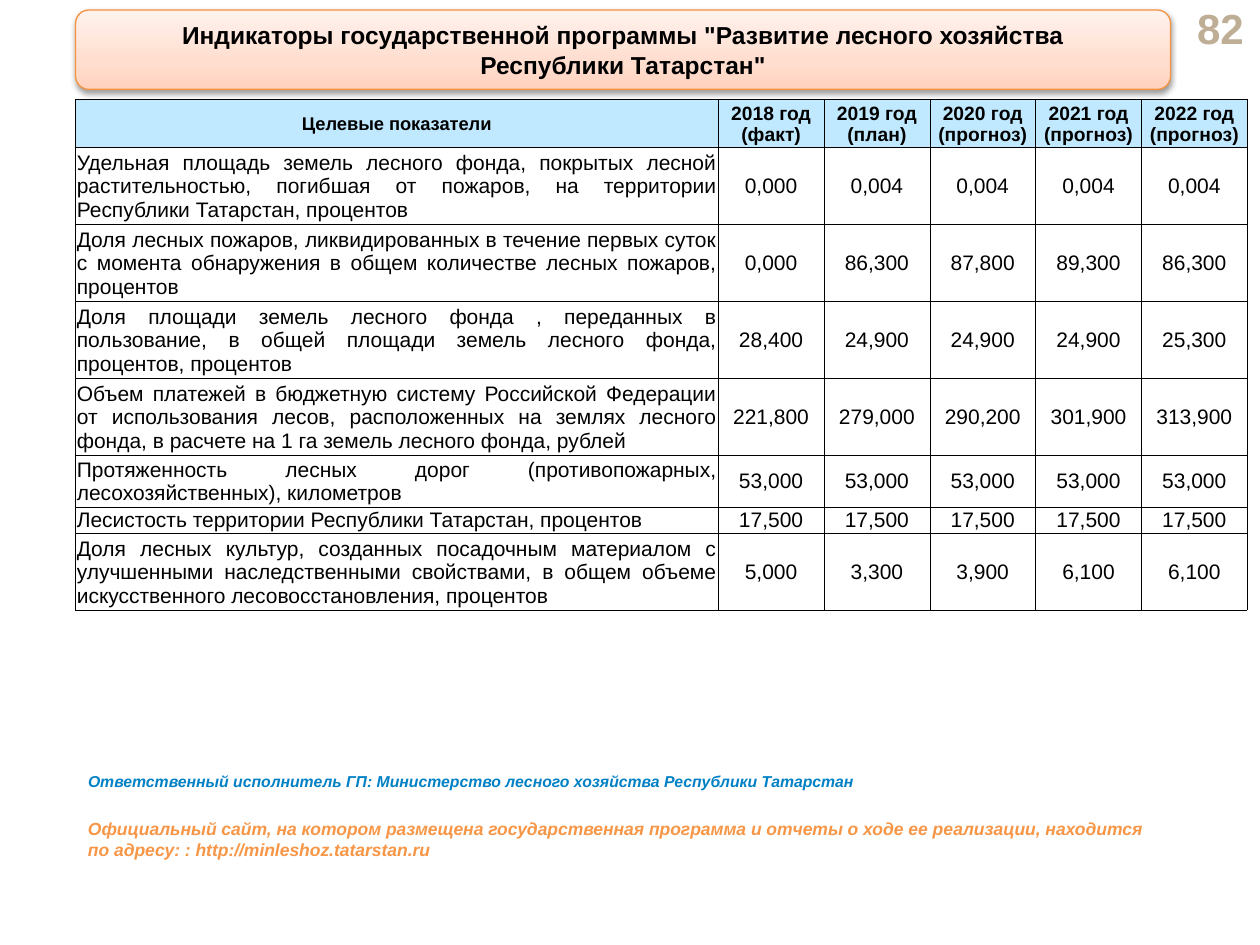
from pptx import Presentation
from pptx.dml.color import RGBColor
from pptx.enum.shapes import MSO_SHAPE
from pptx.enum.text import MSO_ANCHOR as Anchor, PP_ALIGN as Align
from pptx.oxml.ns import qn
from pptx.util import Inches, Pt
from copy import deepcopy
from lxml.etree import SubElement

FONT = "Arial"
BLACK = RGBColor(0x00, 0x00, 0x00)
WHITE = RGBColor(0xFF, 0xFF, 0xFF)
HEADER_BLUE = RGBColor(0xC0, 0xE9, 0xFF)
NUMBER_BEIGE = RGBColor(0xBF, 0xAE, 0x96)
TITLE_EDGE = RGBColor(0xF6, 0x92, 0x40)
EXECUTOR_BLUE = RGBColor(0x00, 0x81, 0xC5)
SITE_ORANGE = RGBColor(0xF7, 0x96, 0x46)
TITLE_GRADIENT = [
    (0, RGBColor(0xFF, 0xD2, 0xBD)),
    (0.35, RGBColor(0xFF, 0xDE, 0xD0)),
    (1, RGBColor(0xFF, 0xF2, 0xED)),
]

LEFT = 0.6
INDICATOR_WIDTH, YEAR_WIDTH = 5.1, 0.84
ROW_HEIGHTS = [0.38, 0.61, 0.61, 0.61, 0.61, 0.41, 0.21, 0.61]
TITLE_LINES = [
    'Индикаторы государственной программы "Развитие лесного хозяйства',
    'Республики Татарстан"',
]
HEADER = ["Целевые показатели", "2018 год (факт)", "2019 год (план)",
          "2020 год (прогноз)", "2021 год (прогноз)", "2022 год (прогноз)"]
INDICATORS = [
    ["Удельная площадь земель лесного фонда, покрытых лесной растительностью, "
     "погибшая от пожаров, на территории Республики Татарстан, процентов",
     "0,000", "0,004", "0,004", "0,004", "0,004"],
    ["Доля лесных пожаров, ликвидированных в течение первых суток с момента "
     "обнаружения в общем количестве лесных пожаров, процентов",
     "0,000", "86,300", "87,800", "89,300", "86,300"],
    ["Доля площади земель лесного фонда , переданных в пользование, в общей "
     "площади земель лесного фонда, процентов, процентов",
     "28,400", "24,900", "24,900", "24,900", "25,300"],
    ["Объем платежей в бюджетную систему Российской Федерации от использования "
     "лесов, расположенных на землях лесного фонда, в расчете на 1 га земель "
     "лесного фонда, рублей",
     "221,800", "279,000", "290,200", "301,900", "313,900"],
    ["Протяженность лесных дорог (противопожарных, лесохозяйственных), километров",
     "53,000", "53,000", "53,000", "53,000", "53,000"],
    ["Лесистость территории Республики Татарстан, процентов",
     "17,500", "17,500", "17,500", "17,500", "17,500"],
    ["Доля лесных культур, созданных посадочным материалом с улучшенными "
     "наследственными свойствами, в общем объеме искусственного "
     "лесовосстановления, процентов",
     "5,000", "3,300", "3,900", "6,100", "6,100"],
]
EXECUTOR = ("Ответственный исполнитель ГП: Министерство лесного хозяйства "
            "Республики Татарстан")
SITE = ("Официальный сайт, на котором размещена государственная программа и отчеты "
        "о ходе ее реализации, находится по адресу: : http://minleshoz.tatarstan.ru")


def write(paragraph, text, size, color=BLACK, bold=True, italic=False, align=Align.LEFT):
    """Add one styled run to a paragraph."""
    paragraph.alignment = align
    run = paragraph.add_run()
    run.text = text
    font = run.font
    font.name, font.size, font.bold, font.italic = FONT, Pt(size), bold, italic
    font.color.rgb = color


def add_label(slide, box, text, size, color, anchor=Anchor.TOP, **style):
    """Add a wrapped text box with a single paragraph."""
    frame = slide.shapes.add_textbox(*map(Inches, box)).text_frame
    frame.word_wrap = True
    frame.vertical_anchor = anchor
    write(frame.paragraphs[0], text, size, color, **style)


def fill_gradient(shape, stops):
    """Fill a shape with stops running from bottom to top."""
    shape.fill.gradient()
    shape.fill.gradient_angle = 90
    stop_list = shape.fill._fill._gradFill.find(qn("a:gsLst"))
    stop_list.append(deepcopy(stop_list[-1]))
    for stop, (position, color) in zip(shape.fill.gradient_stops, stops):
        stop.position = position
        stop.color.rgb = color


def add_drop_shadow(shape):
    """Give a shape a soft shadow falling straight down."""
    shape.shadow.inherit = False
    effects = shape._element.spPr.find(qn("a:effectLst"))
    shadow = SubElement(effects, qn("a:outerShdw"), blurRad=str(Pt(3.1)),
                        dist=str(Pt(1.6)), dir="5400000", rotWithShape="0")
    color = SubElement(shadow, qn("a:srgbClr"), val=str(BLACK))
    SubElement(color, qn("a:alpha"), val="38000")


def add_title(slide):
    """Add the rounded title banner."""
    banner = slide.shapes.add_shape(
        MSO_SHAPE.ROUNDED_RECTANGLE, *map(Inches, (LEFT, 0.08, 8.69, 0.63)))
    fill_gradient(banner, TITLE_GRADIENT)
    banner.line.color.rgb = TITLE_EDGE
    banner.line.width = Pt(0.75)
    add_drop_shadow(banner)
    frame = banner.text_frame
    frame.word_wrap = True
    frame.vertical_anchor = Anchor.MIDDLE
    for index, line in enumerate(TITLE_LINES):
        paragraph = frame.add_paragraph() if index else frame.paragraphs[0]
        write(paragraph, line, 14, align=Align.CENTER)


def add_borders(cell):
    """Draw thin black lines on all four sides of a cell."""
    properties = cell._tc.get_or_add_tcPr()
    for side in ("a:lnL", "a:lnR", "a:lnT", "a:lnB"):
        line = SubElement(properties, qn(side), w=str(Pt(0.25)))
        SubElement(SubElement(line, qn("a:solidFill")), qn("a:srgbClr"), val=str(BLACK))


def fill_cell(cell, text, size, fill, bold, align):
    """Write and style one table cell."""
    cell.margin_left = cell.margin_right = cell.margin_top = Inches(0.01)
    cell.margin_bottom = 0
    cell.vertical_anchor = Anchor.MIDDLE
    add_borders(cell)
    cell.fill.solid()
    cell.fill.fore_color.rgb = fill
    write(cell.text_frame.paragraphs[0], text, size, bold=bold, align=align)


def add_indicator_table(slide):
    """Add the table of target indicators by year."""
    rows = [HEADER] + INDICATORS
    widths = [INDICATOR_WIDTH] + [YEAR_WIDTH] * (len(HEADER) - 1)
    box = (LEFT, 0.79, sum(widths), sum(ROW_HEIGHTS))
    table = slide.shapes.add_table(len(rows), len(widths), *map(Inches, box)).table
    table.first_row = table.horz_banding = False
    for column, width in zip(table.columns, widths):
        column.width = Inches(width)
    for row, height in zip(table.rows, ROW_HEIGHTS):
        row.height = Inches(height)
    for column, heading in enumerate(HEADER):
        size = 11 if column else 10.5
        fill_cell(table.cell(0, column), heading, size, HEADER_BLUE, True, Align.CENTER)
    for row, indicator in enumerate(INDICATORS, start=1):
        for column, text in enumerate(indicator):
            align = Align.CENTER if column else Align.JUSTIFY
            fill_cell(table.cell(row, column), text, 12, WHITE, False, align)


def main():
    """Build the slide and save it."""
    deck = Presentation()
    deck.slide_width, deck.slide_height = Inches(10), Inches(7.5)
    slide = deck.slides.add_slide(deck.slide_layouts[6])
    add_label(slide, (9.11, 0.05, 0.86, 0.34), "82", 24, NUMBER_BEIGE,
              Anchor.MIDDLE, align=Align.RIGHT)
    add_indicator_table(slide)
    add_title(slide)
    add_label(slide, (LEFT, 6.08, 9.15, 0.4), EXECUTOR, 9, EXECUTOR_BLUE, italic=True)
    add_label(slide, (LEFT, 6.44, 8.73, 0.44), SITE, 10, SITE_ORANGE, italic=True)
    deck.save("out.pptx")


if __name__ == "__main__":
    main()
